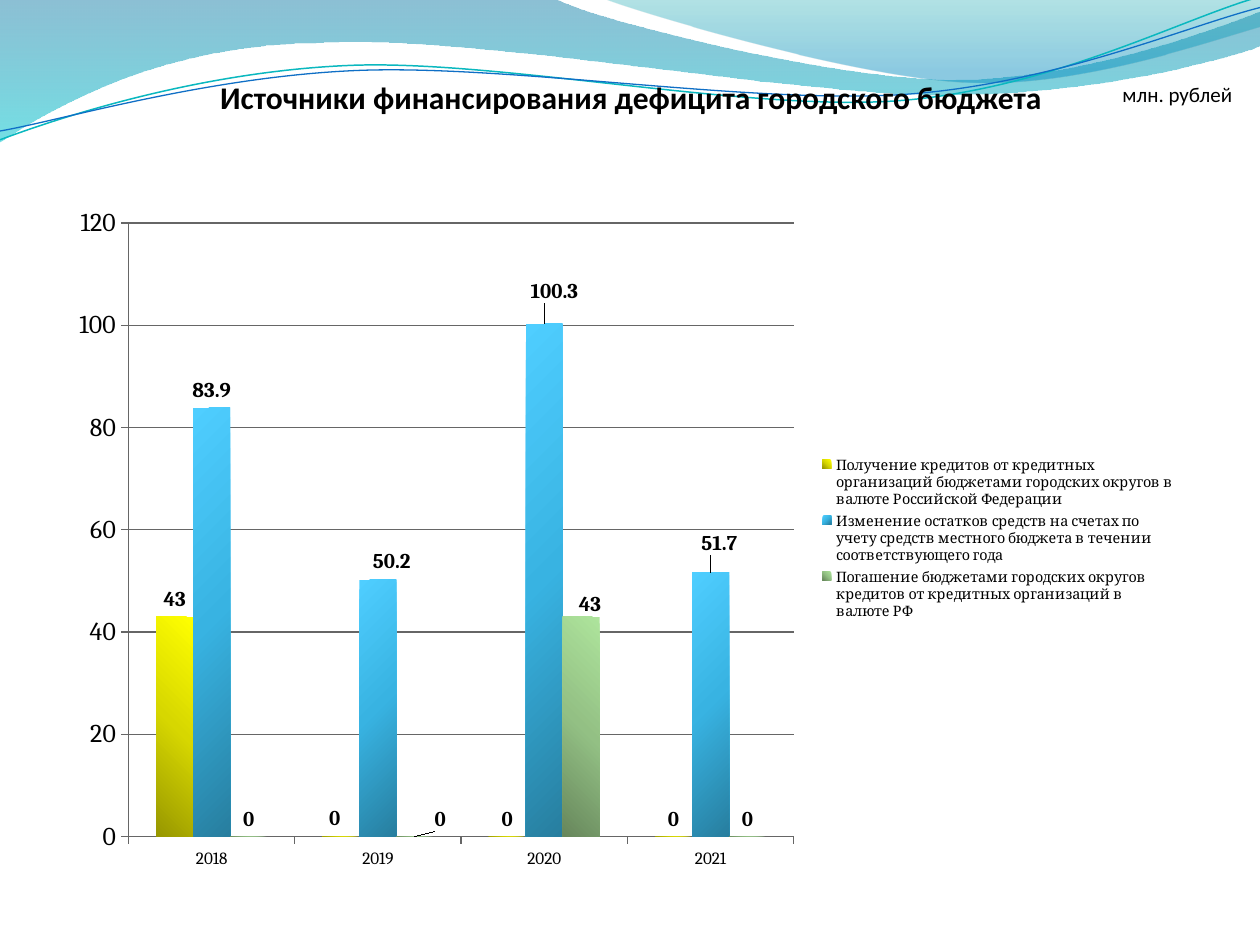
import lxml.etree
import pptx
import pptx.chart.data
import pptx.dml.color
import pptx.enum.chart
import pptx.enum.text
import pptx.oxml
import pptx.oxml.ns
import pptx.util

Inches = pptx.util.Inches
Pt = pptx.util.Pt
qn = pptx.oxml.ns.qn

LEFT_WAVE = [(0, -0.01), (4.4, -0.01), (4.76, 0.17, 6.64, 0.63, 7.58, 0.63),
             (8.53, 0.63, 9.58, 0.26, 10, 0.09), (10.01, 0.36),
             (9.83, 0.44, 8.7, 0.76, 7.46, 0.75), (6.22, 0.75, 3.82, 0.28, 2.57, 0.34),
             (1.29, 0.35, 0.46, 0.83, -0.01, 1.13), (0, -0.01)]
RIGHT_WAVE = [(4.79, -0.01), (5.09, 0.11, 6.82, 0.62, 7.69, 0.65),
              (8.56, 0.69, 9.61, 0.32, 10, 0.21), (10, 0), (4.79, -0.01)]
TEAL_LINE = [(0, 1.11), (0.48, 0.93, 1.58, 0.57, 2.77, 0.52),
             (3.95, 0.47, 5.93, 0.89, 7.13, 0.8), (8.33, 0.71, 9.38, 0.15, 9.98, -0.02)]
BLUE_LINE = [(0, 1.04), (0.47, 0.96, 1.64, 0.61, 2.83, 0.56),
             (4.03, 0.51, 5.97, 0.83, 7.17, 0.75), (8.36, 0.67, 9.41, 0.21, 10, 0.06)]

CHART_WIDTH, CHART_HEIGHT = 8.97, 5.46
YEARS = ["2018", "2019", "2020", "2021"]
SOURCES = [
    ("Получение кредитов от кредитных организаций бюджетами городских округов в валюте Российской Федерации",
     (43, 0, 0, 0), ("979700", "D7D700", "FFFF00"), "l", {1: (-0.05, -0.01)}),
    ("Изменение остатков средств на счетах по учету средств местного бюджета в течении соответствующего года",
     (83.9, 50.2, 100.3, 51.7), ("277E9F", "38B3E2", "4FCEFF"), "r",
     {1: (0.11, -0.01), 2: (0.08, -0.12), 3: (0.07, -0.09)}),
    ("Погашение бюджетами городских округов кредитов от кредитных организаций в валюте РФ",
     (0, 0, 43, 0), ("67875C", "93C084", "AEE49C"), "l", {1: (0.2, 0), 2: (0.07, 0.04)}),
]


def rgb(hex_color):
    """Return the colour for a hex string."""
    return pptx.dml.color.RGBColor.from_string(hex_color)


def style_font(font, size, name, bold=False):
    """Give a font its size, face, weight and black colour."""
    font.size, font.name, font.bold = Pt(size), name, bold
    font.color.rgb = rgb("000000")


def apply_gradient(properties, stops, direction):
    """Replace an empty fill by a gradient of (position, colour, opacity) stops."""
    stop_xml = "".join(
        f'<a:gs pos="{position * 1000}"><a:srgbClr val="{color}">'
        f'<a:alpha val="{opacity * 1000}"/></a:srgbClr></a:gs>'
        for position, color, opacity in stops)
    gradient = pptx.oxml.parse_xml(
        f'<a:gradFill {pptx.oxml.ns.nsdecls("a")} rotWithShape="1">'
        f'<a:gsLst>{stop_xml}</a:gsLst>{direction}</a:gradFill>')
    properties.replace(properties.find(qn("a:noFill")), gradient)


def bend_segments(outline, segments):
    """Join the control points of each curve segment into a cubic curve."""
    lines = iter(outline._element.xpath(".//a:lnTo"))
    for segment in segments[1:]:
        parts = [next(lines) for _ in range(len(segment) // 2)]
        if len(parts) == 3:
            curve = lxml.etree.Element(qn("a:cubicBezTo"))
            parts[0].addprevious(curve)
            for part in parts:
                curve.append(part[0])
                part.getparent().remove(part)


def add_outline(slide, segments, closed):
    """Add an unfilled freeform of straight and curved segments."""
    points = [(Inches(segment[i]), Inches(segment[i + 1]))
              for segment in segments for i in range(0, len(segment), 2)]
    builder = slide.shapes.build_freeform(*points[0])
    builder.add_line_segments(points[1:], close=closed)
    outline = builder.convert_to_shape()
    bend_segments(outline, segments)
    outline.shadow.inherit = False
    outline.fill.background()
    return outline


def add_wave(slide, segments, stops):
    """Add a translucent wave with a vertical gradient."""
    wave = add_outline(slide, segments, True)
    wave.line.fill.background()
    apply_gradient(wave._element.spPr, stops, '<a:lin ang="5400000" scaled="1"/>')


def add_wave_line(slide, segments, color, width):
    """Add a thin curved line."""
    curve = add_outline(slide, segments, False)
    curve.line.color.rgb = rgb(color)
    curve.line.width = Pt(width)


def add_text(slide, box, text, size, bold=False, centered=False, inset=None):
    """Add one line of Calibri text."""
    frame = slide.shapes.add_textbox(*map(Inches, box)).text_frame
    frame.word_wrap = True
    if inset is not None:
        frame.margin_left = frame.margin_right = Inches(inset)
        frame.margin_top = frame.margin_bottom = Inches(inset)
    frame.text = text
    paragraph = frame.paragraphs[0]
    if centered:
        paragraph.alignment = pptx.enum.text.PP_ALIGN.CENTER
    style_font(paragraph.runs[0].font, size, "Calibri", bold)


def make_layout(x, y, w=None, h=None, inner=False):
    """Return a manual chart layout for a place, or a shift, in inches."""
    layout = lxml.etree.Element(qn("c:layout"))
    manual = lxml.etree.SubElement(layout, qn("c:manualLayout"))
    settings = [("layoutTarget", "inner")] if inner else []
    if w is not None:
        settings += [("xMode", "edge"), ("yMode", "edge")]
    settings += [("x", x / CHART_WIDTH), ("y", y / CHART_HEIGHT)]
    if w is not None:
        settings += [("w", w / CHART_WIDTH), ("h", h / CHART_HEIGHT)]
    for tag, value in settings:
        lxml.etree.SubElement(manual, qn(f"c:{tag}")).set("val", str(value))
    return layout


def remove_children(parent, tag):
    """Remove the direct children of a chart part that have the tag."""
    for child in parent.findall(qn(tag)):
        parent.remove(child)


def style_axis(axis, size):
    """Format the labels, ticks and line of an axis."""
    style_font(axis.tick_labels.font, size, "Cambria")
    axis.major_tick_mark = pptx.enum.chart.XL_TICK_MARK.OUTSIDE
    axis.format.line.color.rgb = rgb("666666")
    axis.format.line.width = Pt(0.75)


def style_series(series, colors, dark_side, label_shifts):
    """Shade the columns from a lower corner and place their labels."""
    series.format.fill.background()
    corner = {"l": 'r="100000"', "r": 'l="100000"'}[dark_side]
    apply_gradient(series._element.get_or_add_spPr(),
                   [(i * 50, color, 100) for i, color in enumerate(colors)],
                   f'<a:path path="circle"><a:fillToRect {corner} t="100000"/></a:path>')
    outside = pptx.enum.chart.XL_LABEL_POSITION.OUTSIDE_END
    labels = series.data_labels
    labels.show_value = True
    labels.position = outside
    style_font(labels.font, 12, "Cambria", True)
    for index, shift in label_shifts.items():
        label = series.points[index].data_label
        style_font(label.font, 12, "Cambria", True)
        label.position = outside
        marker = series._element.xpath(f'.//c:dLbl/c:idx[@val="{index}"]')[0]
        marker.addnext(make_layout(*shift))
    remove_children(series._element.find(qn("c:dLbls")), "c:showLeaderLines")


def add_deficit_chart(slide):
    """Add the clustered column chart of deficit funding sources."""
    data = pptx.chart.data.CategoryChartData()
    data.categories = YEARS
    for name, values, *_ in SOURCES:
        data.add_series(name, values)
    chart = slide.shapes.add_chart(
        pptx.enum.chart.XL_CHART_TYPE.COLUMN_CLUSTERED,
        *map(Inches, (0.45, 1.55, CHART_WIDTH, CHART_HEIGHT)), data).chart
    style_font(chart.font, 14.7, "Cambria")
    chart.has_title = False
    style_axis(chart.category_axis, 9.8)
    amounts = chart.value_axis
    style_axis(amounts, 14.7)
    amounts.minimum_scale, amounts.maximum_scale, amounts.major_unit = 0, 120, 20
    amounts.has_major_gridlines = True
    amounts.major_gridlines.format.line.color.rgb = rgb("666666")
    plot = chart.plots[0]
    plot.gap_width, plot.overlap, plot.vary_by_categories = 150, 0, False
    for series, (_, _, *style) in zip(plot.series, SOURCES):
        style_series(series, *style)
    chart.has_legend = True
    legend = chart.legend
    legend.position = pptx.enum.chart.XL_LEGEND_POSITION.RIGHT
    legend.include_in_layout = False
    style_font(legend.font, 8.2, "Cambria")
    legend_part = legend._element
    remove_children(legend_part, "c:layout")
    legend_part.find(qn("c:legendPos")).addnext(make_layout(6.07, 2.04, 2.8, 1.37))
    plot_area = chart._chartSpace.chart.plotArea
    remove_children(plot_area, "c:layout")
    plot_area.insert(0, make_layout(0.57, 0.22, 5.28, 4.87, inner=True))


def main():
    """Build the slide and save it."""
    deck = pptx.Presentation()
    deck.slide_width, deck.slide_height = Inches(10), Inches(7.5)
    slide = deck.slides.add_slide(deck.slide_layouts[6])
    add_wave(slide, LEFT_WAVE, [(0, "0074A1", 45), (100, "00C6CF", 55)])
    add_wave(slide, RIGHT_WAVE, [(0, "00A1A9", 30), (80, "008BBF", 45)])
    add_wave_line(slide, TEAL_LINE, "0AB8BF", 0.85)
    add_wave_line(slide, BLUE_LINE, "0F6FC6", 0.75)
    add_text(slide, (0.51, 0.62, 9, 0.55), "Источники финансирования дефицита городского бюджета",
             18, bold=True, centered=True, inset=0)
    add_deficit_chart(slide)
    add_text(slide, (8.81, 0.6, 1.19, 0.3), "млн. рублей", 12)
    deck.save("out.pptx")


if __name__ == "__main__":
    main()
